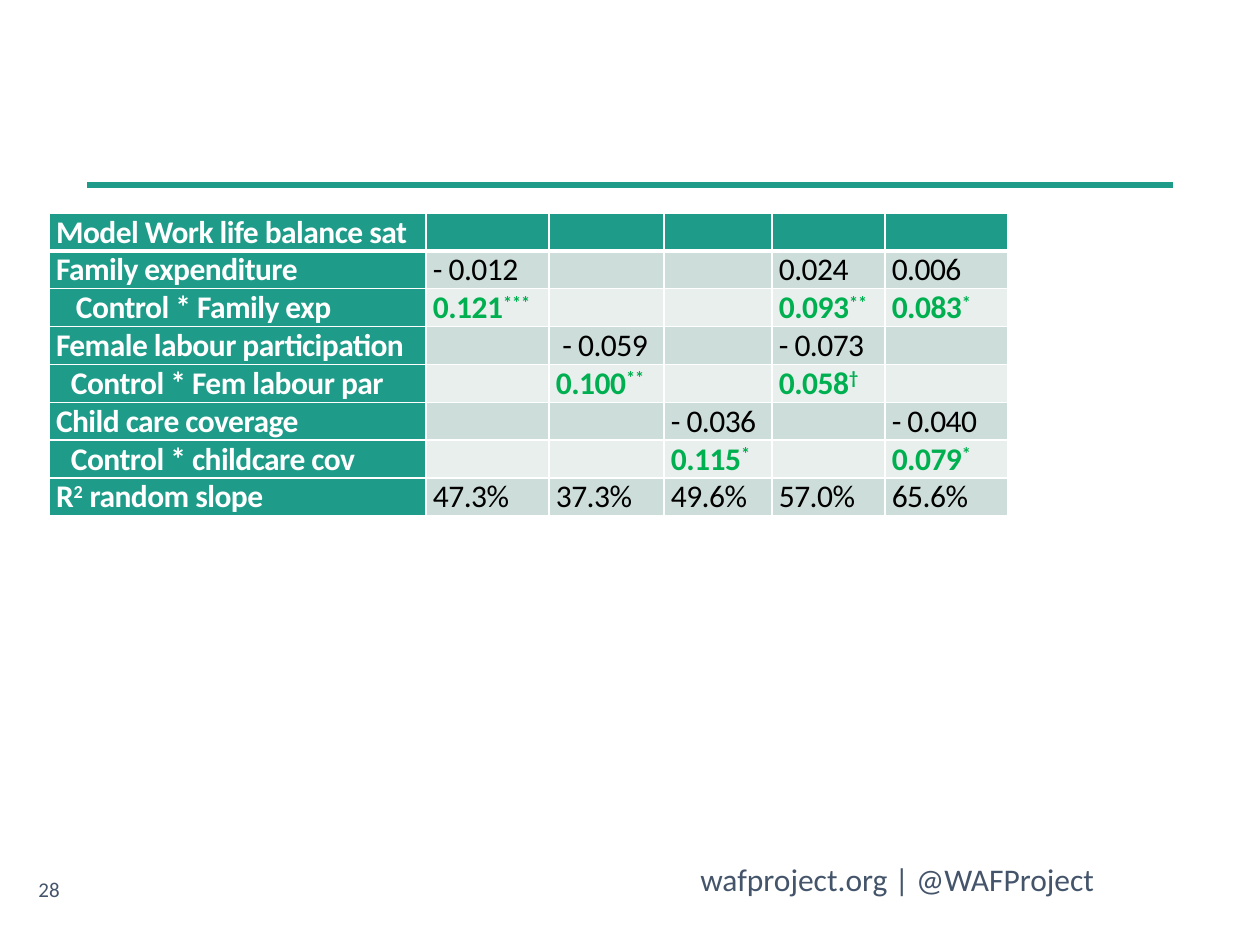
from lxml.etree import SubElement
from pptx import Presentation
from pptx.dml.color import RGBColor
from pptx.enum.shapes import MSO_CONNECTOR
from pptx.enum.text import MSO_ANCHOR, PP_ALIGN
from pptx.oxml import parse_xml
from pptx.oxml.ns import nsdecls, qn
from pptx.util import Pt

PX = 914400 // 126
COLORS = {"teal": "1E9C89", "band": "CDDEDA", "light": "E8EFED", "white": "FFFFFF",
          "black": "000000", "green": "00B050", "slate": "44546A"}
COLUMN_WIDTHS = [377, 123, 115, 108, 113, 123]
ROW_HEIGHT = 34
# A caret switches superscript on and off.
ROWS = [
    ["Model Work life balance sat", "", "", "", "", ""],
    ["Family expenditure", "- 0.012", "", "", "0.024", "0.006"],
    ["Control * Family exp", "0.121^***", "", "", "0.093^**", "0.083^*"],
    ["Female labour participation", "", " - 0.059", "", "- 0.073", ""],
    ["Control * Fem labour par", "", "0.100^**", "", "0.058^†", ""],
    ["Child care coverage", "", "", "- 0.036", "", "- 0.040"],
    ["Control * childcare cov", "", "", "0.115^*", "", "0.079^*"],
    ["R^2^ random slope", "47.3%", "37.3%", "49.6%", "57.0%", "65.6%"],
]
LABEL_INDENTS = {2: 20, 4: 15, 6: 15}


def rgb(name):
    return RGBColor.from_string(COLORS[name])


class SlideBuilder:
    """Holds the style and the current slide."""

    def __init__(self, slide, font="Calibri"):
        self.slide = slide
        self.font = font

    def run(self, paragraph, text, size, color, bold=False):
        run = paragraph.add_run()
        run.text = text
        run.font.name = self.font
        run.font.size = Pt(size)
        run.font.bold = bold
        run.font.color.rgb = rgb(color)
        return run

    def text(self, left, top, width, height, text, size, color,
             align=PP_ALIGN.LEFT, anchor=MSO_ANCHOR.TOP):
        box = self.slide.shapes.add_textbox(left * PX, top * PX, width * PX, height * PX)
        box.text_frame.word_wrap = True
        box.text_frame.vertical_anchor = anchor
        paragraph = box.text_frame.paragraphs[0]
        paragraph.alignment = align
        self.run(paragraph, text, size, color)

    def rule(self, left, right, y, color, weight):
        line = self.slide.shapes.add_connector(
            MSO_CONNECTOR.STRAIGHT, left * PX, y * PX, right * PX, y * PX)
        line.line.color.rgb = rgb(color)
        line.line.width = Pt(weight)
        SubElement(line._element.spPr, qn("a:effectLst"))

    def borders(self, cell, color, weights):
        """Draw cell borders; weights maps the sides L, R, T, B to points."""
        properties = cell._tc.get_or_add_tcPr()
        for position, (side, weight) in enumerate(weights.items()):
            properties.insert(position, parse_xml(
                f'<a:ln{side} {nsdecls("a")} w="{Pt(weight)}"><a:solidFill>'
                f'<a:srgbClr val="{COLORS[color]}"/></a:solidFill></a:ln{side}>'))

    def cell_text(self, cell, text, color, bold, align, indent, is_label):
        paragraph = cell.text_frame.paragraphs[0]
        paragraph.alignment = align
        if indent:
            paragraph._p.get_or_add_pPr().set("indent", str(indent * PX))
        for index, part in enumerate(text.split("^")):
            properties = self.run(paragraph, part, 18, color, bold)._r.get_or_add_rPr()
            raised = index % 2 == 1
            if raised:
                properties.set("baseline", "30000")
            properties.set("spc", "0" if raised and not is_label else "-30")

    def table(self, left, top, rows, widths, row_height):
        table = self.slide.shapes.add_table(
            len(rows), len(widths), left * PX, top * PX,
            sum(widths) * PX, len(rows) * row_height * PX).table
        table.first_col = True
        for column, width in zip(table.columns, widths):
            column.width = width * PX
        for r, values in enumerate(rows):
            table.rows[r].height = row_height * PX
            for c, value in enumerate(values):
                cell = table.cell(r, c)
                is_label = r == 0 or c == 0
                cell.margin_left = cell.margin_right = 7 * PX
                cell.margin_top = cell.margin_bottom = 0
                cell.fill.solid()
                cell.fill.fore_color.rgb = rgb(
                    "teal" if is_label else "band" if r % 2 else "light")
                self.borders(cell, "white", {"L": 1, "R": 1, "T": 3 if r == 1 else 1,
                                             "B": 3 if r == 0 else 1})
                if value:
                    significant = "^" in value
                    color = "white" if is_label else "green" if significant else "black"
                    flush_left = c == 1 or (r == len(rows) - 1 and c > 0)
                    self.cell_text(cell, value, color, is_label or significant,
                                   PP_ALIGN.LEFT if flush_left else PP_ALIGN.JUSTIFY,
                                   LABEL_INDENTS.get(r, 0) if c == 0 else 0, is_label)


def main():
    presentation = Presentation()
    presentation.slide_width = 1260 * PX
    presentation.slide_height = 945 * PX
    builder = SlideBuilder(presentation.slides.add_slide(presentation.slide_layouts[6]))
    builder.text(688, 854, 748, 50, "wafproject.org | @WAFProject", 18, "slate")
    builder.rule(87, 1173, 185, "teal", 3)
    builder.table(49, 213, ROWS, COLUMN_WIDTHS, ROW_HEIGHT)
    builder.text(18, 864, 54, 50, "28", 12, "slate", PP_ALIGN.RIGHT, MSO_ANCHOR.MIDDLE)
    presentation.save("out.pptx")


if __name__ == "__main__":
    main()
